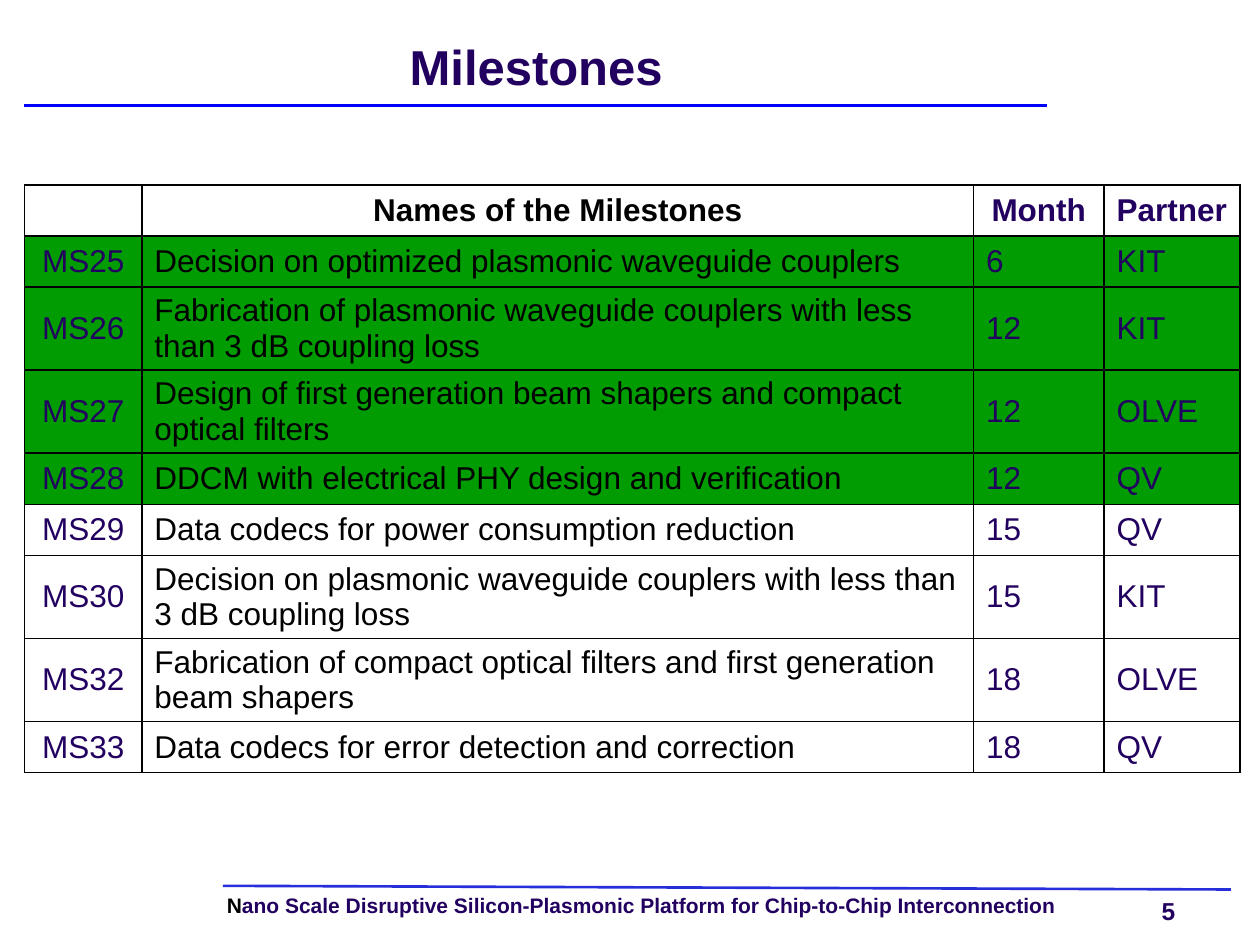
from dataclasses import dataclass

from lxml.etree import SubElement
from pptx import Presentation
from pptx.dml.color import RGBColor
from pptx.enum.shapes import MSO_CONNECTOR
from pptx.enum.text import MSO_ANCHOR, PP_ALIGN
from pptx.oxml.ns import qn
from pptx.util import Pt


@dataclass(frozen=True)
class Theme:
    font: str = "Arial"
    ink: str = "220060"
    black: str = "000000"
    done: str = "009C01"
    rule: str = "0000FF"
    base: str = "262FDA"
    title: float = 28
    cell: float = 18
    foot: float = 12
    page: float = 14
    edge: float = 1


THEME = Theme()
HEAD = ("", "Names of the Milestones", "Month", "Partner")
ROWS = [
    ("MS25", "Decision on optimized plasmonic waveguide couplers", "6", "KIT"),
    ("MS26", "Fabrication of plasmonic waveguide couplers with less than 3 dB coupling loss", "12", "KIT"),
    ("MS27", "Design of first generation beam shapers and compact optical filters", "12", "OLVE"),
    ("MS28", "DDCM with electrical PHY design and verification", "12", "QV"),
    ("MS29", "Data codecs for power consumption reduction", "15", "QV"),
    ("MS30", "Decision on plasmonic waveguide couplers with less than 3 dB coupling loss", "15", "KIT"),
    ("MS32", "Fabrication of compact optical filters and first generation beam shapers", "18", "OLVE"),
    ("MS33", "Data codecs for error detection and correction", "18", "QV"),
]
DONE = 4
COLS = (67, 475.2, 74.6, 77.6)
HIGH = 29.2
INSET = 2.15


def write(para, text, size=THEME.cell, color=THEME.ink, bold=False, align=None, gap=None):
    """Add a run to the paragraph; gap is its line spacing."""
    run = para.add_run()
    run.text = text
    font = run.font
    font.name, font.size, font.bold = THEME.font, Pt(size), bold
    font.color.rgb = RGBColor.from_string(color)
    if align is not None:
        para.alignment = align
    if gap is not None:
        para.line_spacing = gap


def box(slide, left, top, wide, high, wrap=True, anchor=MSO_ANCHOR.TOP):
    """Add a text box without margins and return its paragraph."""
    frame = slide.shapes.add_textbox(Pt(left), Pt(top), Pt(wide), Pt(high)).text_frame
    frame.margin_left = frame.margin_right = frame.margin_top = frame.margin_bottom = 0
    frame.word_wrap = wrap
    frame.vertical_anchor = anchor
    return frame.paragraphs[0]


def line(slide, start, end, color):
    link = slide.shapes.add_connector(MSO_CONNECTOR.STRAIGHT, *map(Pt, start + end))
    link.line.color.rgb = RGBColor.from_string(color)
    link.line.width = Pt(1.5)
    SubElement(link._element.spPr, qn("a:effectLst"))


def border(cell):
    props = cell._tc.get_or_add_tcPr()
    for spot, side in enumerate(("a:lnL", "a:lnR", "a:lnT", "a:lnB")):
        edge = SubElement(props, qn(side), w=str(Pt(THEME.edge)))
        fill = SubElement(edge, qn("a:solidFill"))
        SubElement(fill, qn("a:srgbClr"), val=THEME.black)
        props.remove(edge)
        props.insert(spot, edge)


def grid(slide, left, top):
    rows = [HEAD] + ROWS
    shape = slide.shapes.add_table(
        len(rows), len(COLS), Pt(left), Pt(top), Pt(sum(COLS)), Pt(HIGH * len(rows)))
    table = shape.table
    table.first_row = table.horz_banding = False
    for col, wide in zip(table.columns, COLS):
        col.width = Pt(wide)
    for r, row in enumerate(rows):
        table.rows[r].height = Pt(HIGH)
        for c, text in enumerate(row):
            cell = table.cell(r, c)
            cell.vertical_anchor = MSO_ANCHOR.MIDDLE
            cell.margin_top = cell.margin_bottom = Pt(INSET)
            if 1 <= r <= DONE:
                cell.fill.solid()
                cell.fill.fore_color.rgb = RGBColor.from_string(THEME.done)
            else:
                cell.fill.background()
            border(cell)
            if text:
                write(cell.text_frame.paragraphs[0], text, bold=r == 0,
                      color=THEME.black if c == 1 else THEME.ink,
                      align=PP_ALIGN.CENTER if r == 0 or c == 0 else PP_ALIGN.LEFT)


def footer(slide):
    para = box(slide, 129.6, 511.9, 514, 13)
    write(para, "N", size=THEME.foot, color=THEME.black, bold=True, gap=0.9)
    write(para, "ano Scale Disruptive Silicon-Plasmonic Platform for Chip-to-Chip Interconnection",
          size=THEME.foot, bold=True)
    page = box(slide, 663.8, 511.9, 28.8, 16.6, wrap=False)
    write(page, "5", size=THEME.page, bold=True)
    line(slide, (127.4, 506.2), (703.4, 508.3), THEME.base)


def main():
    deck = Presentation()
    deck.slide_width, deck.slide_height = Pt(720), Pt(540)
    slide = deck.slides.add_slide(deck.slide_layouts[6])
    footer(slide)
    line(slide, (13.7, 60.2), (598.3, 60.2), THEME.rule)
    title = box(slide, 14.4, 14.4, 584, 48.2, anchor=MSO_ANCHOR.MIDDLE)
    write(title, "Milestones", size=THEME.title, bold=True,
          align=PP_ALIGN.CENTER, gap=Pt(32))
    grid(slide, 14.1, 105.6)
    deck.save("out.pptx")


if __name__ == "__main__":
    main()
